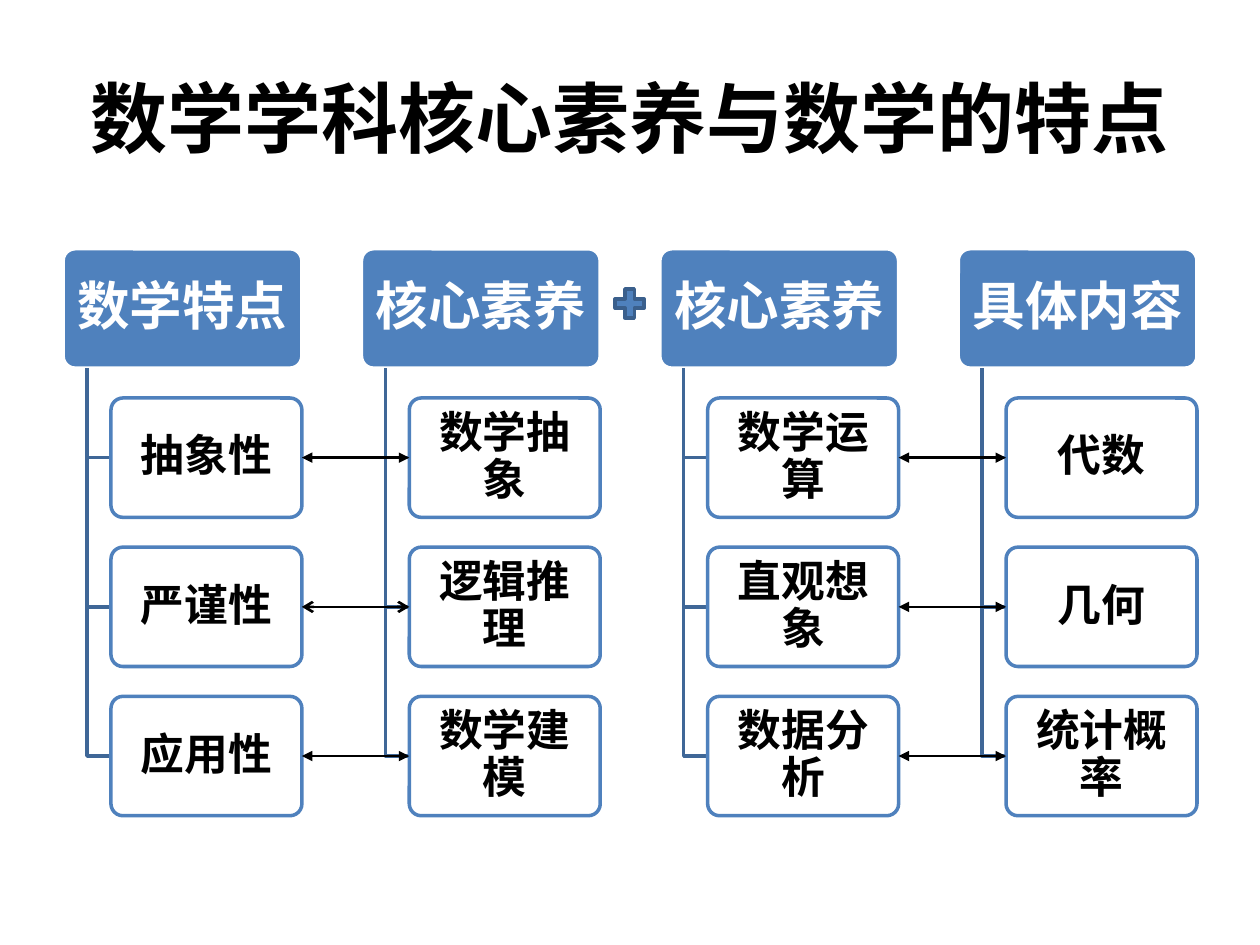
from dataclasses import dataclass

from lxml import etree
from pptx import Presentation
from pptx.dml.color import RGBColor
from pptx.enum.shapes import MSO_CONNECTOR, MSO_SHAPE
from pptx.enum.text import MSO_ANCHOR, PP_ALIGN
from pptx.oxml.ns import qn
from pptx.util import Pt

ROUND = MSO_SHAPE.ROUNDED_RECTANGLE
PLUS = MSO_SHAPE.MATH_PLUS
STRAIGHT = MSO_CONNECTOR.STRAIGHT
MIDDLE = MSO_ANCHOR.MIDDLE
CENTER = PP_ALIGN.CENTER
LEFT_SIDE, RIGHT_SIDE = 1, 3


@dataclass(frozen=True)
class Theme:
    font: str = "Noto Sans CJK SC"
    black: RGBColor = RGBColor.from_string("000000")
    white: RGBColor = RGBColor.from_string("FFFFFF")
    blue: RGBColor = RGBColor.from_string("4F81BD")
    branch: RGBColor = RGBColor.from_string("3F6797")
    plus_edge: RGBColor = RGBColor.from_string("3A5F8C")
    title: float = 44
    header: float = 30
    item: float = 25


theme = Theme()


def write(sp, text, size, color, frame, spacing):
    tf = sp.text_frame
    for name, value in frame.items():
        setattr(tf, name, value)
    p = tf.paragraphs[0]
    p.alignment = CENTER
    p.line_spacing = spacing
    r = p.add_run()
    r.text = text
    for name, value in {"name": theme.font, "size": Pt(size), "bold": True}.items():
        setattr(r.font, name, value)
    r.font.color.rgb = color
    etree.SubElement(r.font._element, qn("a:ea"), typeface=theme.font)


def add_box(kind, left, top, width, height, fill, edge):
    sp = s.shapes.add_shape(kind, Pt(left), Pt(top), Pt(width), Pt(height))
    sp.shadow.inherit = False
    sp.fill.solid()
    sp.fill.fore_color.rgb = fill
    sp.line.color.rgb = edge
    sp.line.width = Pt(2)
    return sp


columns = [
    ("数学特点", ["抽象性", "严谨性", "应用性"]),
    ("核心素养", ["数学抽象", "逻辑推理", "数学建模"]),
    ("核心素养", ["数学运算", "直观想象", "数据分析"]),
    ("具体内容", ["代数", "几何", "统计概率"]),
]
left, top = 36.1, 142.2
col_step, row_step = 170.5, 85.25
header_w, item_w, box_h = 136.4, 109.1, 68.2
trunk_dx, item_dx = 13.6, 27.3

header_frame = {
    "word_wrap": True, "vertical_anchor": MIDDLE,
    "margin_left": Pt(4.5), "margin_right": Pt(4.5),
    "margin_top": Pt(3), "margin_bottom": Pt(3),
}
item_frame = header_frame | {
    "margin_left": Pt(3.75), "margin_right": Pt(3.75),
    "margin_top": Pt(2.5), "margin_bottom": Pt(2.5),
}

prs = Presentation()
prs.slide_width, prs.slide_height = Pt(720), Pt(540)
s = prs.slides.add_slide(prs.slide_layouts[5])

title = s.shapes.title
for name, value in {"left": 36, "top": 21.6, "width": 648, "height": 90}.items():
    setattr(title, name, Pt(value))
write(title, "数学学科核心素养与数学的特点", theme.title, theme.black,
      {"word_wrap": True, "vertical_anchor": MIDDLE}, 1.0)

items = []
for col, (heading, labels) in enumerate(columns):
    x = left + col * col_step
    header = add_box(ROUND, x, top, header_w, box_h, theme.blue, theme.white)
    header.adjustments[0] = 0.1
    write(header, heading, theme.header, theme.white, header_frame, 0.9)
    items.append([])
    for row, label in enumerate(labels):
        y = top + (row + 1) * row_step
        middle = y + box_h / 2
        trunk = x + trunk_dx
        path = s.shapes.build_freeform(Pt(trunk), Pt(top + box_h))
        path.add_line_segments(
            [(Pt(trunk), Pt(middle)), (Pt(x + item_dx), Pt(middle))], close=False)
        branch = path.convert_to_shape()
        branch.shadow.inherit = False
        branch.fill.background()
        branch.line.color.rgb = theme.branch
        branch.line.width = Pt(2)

        item = add_box(ROUND, x + item_dx, y, item_w, box_h, theme.white, theme.blue)
        item.adjustments[0] = 0.1
        fill_color = item._element.spPr.find(qn("a:solidFill"))[0]
        etree.SubElement(fill_color, qn("a:alpha"), val="90000")
        write(item, label, theme.item, theme.black, item_frame, 0.9)
        items[col].append(item)

add_box(PLUS, 348.6, 162.2, 22.5, 22.5, theme.blue, theme.plus_edge)

for source, target in ((0, 1), (2, 3)):
    for row, (start, end) in enumerate(zip(items[source], items[target])):
        link = s.shapes.add_connector(STRAIGHT, 0, 0, 0, 0)
        link.begin_connect(start, RIGHT_SIDE)
        link.end_connect(end, LEFT_SIDE)
        link.line.color.rgb = theme.black
        link.line.width = Pt(1.5)
        head = "arrow" if (source, row) == (0, 1) else "triangle"
        ln = link.line._get_or_add_ln()
        for tag in ("a:headEnd", "a:tailEnd"):
            etree.SubElement(ln, qn(tag), type=head)
        etree.SubElement(link._element.spPr, qn("a:effectLst"))

prs.save("out.pptx")
